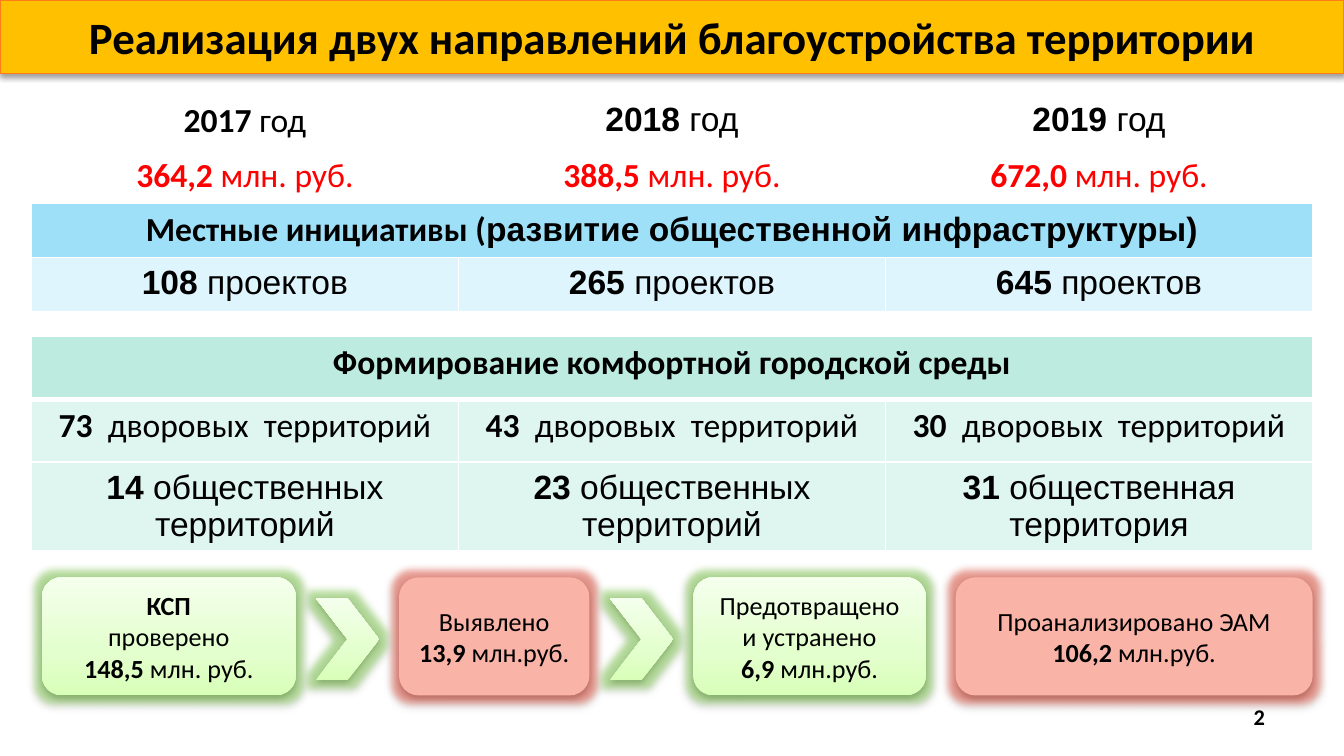
from lxml.etree import SubElement
from pptx import Presentation
from pptx.dml.color import RGBColor
from pptx.enum.shapes import MSO_SHAPE as Shape
from pptx.enum.text import MSO_ANCHOR as Anchor, PP_ALIGN as Align
from pptx.oxml import parse_xml
from pptx.oxml.ns import nsdecls, qn
from pptx.util import Pt

COLORS = {
    "black": "000000", "white": "FFFFFF", "red": "FF0000",
    "title": "FFC000", "title_line": "FF7C1B",
    "blue": "9EE0F8", "pale_blue": "DFF5FD",
    "mint": "BEEBDF", "pale_mint": "DFF5EF",
    "salmon": "F9B3A7", "red_glow": "F03018", "green_glow": "70D030",
}
GREEN_STOPS = [(0, "D8FFB8"), (35, "E3FFCD"), (100, "F4FFEC")]

# A run is (text, bold) or (text, bold, font); a paragraph is a list of runs.
TITLE = [[("Реализация двух направлений благоустройства территории", True)]]
PAGE_NUMBER = [[("2", True)]]

# Each row: (height, fill, text colour, cells); one cell spans all columns.
INITIATIVES = [
    (29.2, None, "black", [
        [("2017", True), (" год", False)],
        [("2018", True, "Arial"), (" год", False, "Arial")],
        [("2019", True, "Arial"), (" год", False, "Arial")]]),
    (29.2, None, "red", [
        [(amount, True), ("млн. руб.", False)] for amount in ("364,2 ", "388,5 ", "672,0 ")]),
    (29.2, "blue", "black", [
        [("Местные инициативы (", True),
         ("развитие общественной инфраструктуры)", True, "Arial")]]),
    (29.2, "pale_blue", "black", [
        [(count, True, "Arial"), ("проектов", False, "Arial")]
        for count in ("108 ", "265 ", "645 ")]),
]
CITY = [
    (33.8, "mint", "black", [[("Формирование комфортной городской среды", True)]]),
    (33.8, "pale_mint", "black", [
        [(count, True), ("дворовых  территорий", False)] for count in ("73  ", "43  ", "30  ")]),
    (47, "pale_mint", "black", [
        [(count, True, "Arial"), (noun, False, "Arial")]
        for count, noun in (("14", " общественных территорий"),
                            ("23", " общественных территорий"),
                            ("31", " общественная территория"))]),
]
# Each table: (top, rows, index of the row with a thick rule under it)
TABLES = [(50.4, INITIATIVES, 0), (180, CITY, 0)]
TABLE_LEFT, COLUMN_WIDTH, COLUMN_COUNT = 16.8, 228.8, 3

# Each box: (left, width, tone, paragraphs)
BOXES = [
    (22.5, 136, "green", [[("КСП", True)], [("проверено", False)],
                          [("148,5 ", True), ("млн. руб.", False)]]),
    (213.8, 102, "red", [[("Выявлено", False)],
                         [("13,9 ", True), ("млн.руб.", False)]]),
    (371.5, 124.5, "green", [[("Предотвращено и устранено", False)],
                             [("6,9 ", True), ("млн.руб.", False)]]),
    (512, 191.2, "red", [[("Проанализировано ЭАМ", False)],
                         [("106,2", True), (" млн.руб.", False)]]),
]
BOX_TOP, BOX_HEIGHT = 309.3, 63.3
CHEVRON_WIDTH, CHEVRON_HEIGHT = 34, 44


def rgb(name):
    return RGBColor.from_string(COLORS[name])


def write(frame, paragraphs, size, color="black", align=Align.CENTER):
    frame.word_wrap = True
    for index, runs in enumerate(paragraphs):
        paragraph = frame.paragraphs[0] if index == 0 else frame.add_paragraph()
        paragraph.alignment = align
        for text, bold, *font in runs:
            run = paragraph.add_run()
            run.text = text
            run.font.name = font[0] if font else "Calibri"
            run.font.size = Pt(size)
            run.font.bold = bold
            run.font.color.rgb = rgb(color)


def add_effect(shape, tag, color, alpha, **attributes):
    effects = shape._element.spPr.find(qn("a:effectLst"))
    effect = SubElement(effects, qn(tag), {key: str(value) for key, value in attributes.items()})
    tint = SubElement(effect, qn("a:srgbClr"), val=COLORS[color])
    SubElement(tint, qn("a:alpha"), val=str(alpha * 1000))


def fill_green(shape):
    """Fill with the three-stop gradient, running from bottom to top."""
    shape.fill.gradient()
    stops = "".join(f'<a:gs pos="{position * 1000}"><a:srgbClr val="{color}"/></a:gs>'
                    for position, color in GREEN_STOPS)
    gradient = parse_xml(f'<a:gradFill {nsdecls("a")} rotWithShape="1"><a:gsLst>{stops}</a:gsLst>'
                         '<a:lin ang="16200000" scaled="0"/></a:gradFill>')
    properties = shape._element.spPr
    properties.replace(properties.find(qn("a:gradFill")), gradient)


def add_block(slide, kind, left, top, width, height, tone):
    """Add a shadowed shape; green and red tones also glow."""
    shape = slide.shapes.add_shape(kind, Pt(left), Pt(top), Pt(width), Pt(height))
    shape.shadow.inherit = False
    if tone == "green":
        fill_green(shape)
    else:
        shape.fill.solid()
        shape.fill.fore_color.rgb = rgb("salmon" if tone == "red" else tone)
    shape.line.fill.background()
    if tone in ("green", "red"):
        add_effect(shape, "a:glow", f"{tone}_glow", 40, rad=Pt(8))
    add_effect(shape, "a:outerShdw", "black", 38, blurRad=Pt(3.1), dist=Pt(1.6),
               dir=5400000, rotWithShape=0)
    shape.text_frame.vertical_anchor = Anchor.MIDDLE
    return shape


def set_borders(cell, bottom_width, top_width):
    properties = cell._tc.get_or_add_tcPr()
    widths = [("L", 1), ("R", 1), ("T", top_width), ("B", bottom_width)]
    for index, (side, width) in enumerate(widths):
        properties.insert(index, parse_xml(
            f'<a:ln{side} {nsdecls("a")} w="{Pt(width)}"><a:solidFill>'
            f'<a:srgbClr val="{COLORS["white"]}"/></a:solidFill></a:ln{side}>'))


def add_table(slide, top, rows, ruled_row):
    height = sum(row[0] for row in rows)
    table = slide.shapes.add_table(len(rows), COLUMN_COUNT, Pt(TABLE_LEFT), Pt(top),
                                   Pt(COLUMN_WIDTH * COLUMN_COUNT), Pt(height)).table
    table.first_row = table.horz_banding = False
    for column in table.columns:
        column.width = Pt(COLUMN_WIDTH)
    for index, (row_height, fill, color, contents) in enumerate(rows):
        table.rows[index].height = Pt(row_height)
        cells = list(table.rows[index].cells)
        for cell in cells:
            if fill:
                cell.fill.solid()
                cell.fill.fore_color.rgb = rgb(fill)
            else:
                cell.fill.background()
            set_borders(cell, 3 if index == ruled_row else 1,
                        3 if index == ruled_row + 1 else 1)
        if len(contents) == 1:
            cells[0].merge(cells[-1])
        for cell, runs in zip(cells, contents):
            write(cell.text_frame, [runs], 18, color)


def main():
    presentation = Presentation()
    presentation.slide_width, presentation.slide_height = Pt(720), Pt(405)
    slide = presentation.slides.add_slide(presentation.slide_layouts[6])

    title = add_block(slide, Shape.RECTANGLE, 0, 0, 720, 39.4, "title")
    title.line.color.rgb = rgb("title_line")
    title.line.width = Pt(0.75)
    write(title.text_frame, TITLE, 24)

    for left, width, tone, paragraphs in BOXES:
        box = add_block(slide, Shape.ROUNDED_RECTANGLE, left, BOX_TOP, width, BOX_HEIGHT, tone)
        write(box.text_frame, paragraphs, 14)

    # A chevron sits centred in each of the first two gaps between boxes.
    chevron_top = BOX_TOP + (BOX_HEIGHT - CHEVRON_HEIGHT) / 2 + 1.5
    for (left, width, *_), (next_left, *_) in zip(BOXES[:2], BOXES[1:3]):
        center = (left + width + next_left) / 2
        add_block(slide, Shape.CHEVRON, center - CHEVRON_WIDTH / 2, chevron_top,
                  CHEVRON_WIDTH, CHEVRON_HEIGHT, "green")

    for top, rows, ruled_row in TABLES:
        add_table(slide, top, rows, ruled_row)

    number = slide.shapes.add_textbox(Pt(658.8), Pt(373), Pt(26), Pt(21.6))
    number.text_frame.vertical_anchor = Anchor.MIDDLE
    write(number.text_frame, PAGE_NUMBER, 12, align=Align.RIGHT)

    presentation.save("out.pptx")


if __name__ == "__main__":
    main()
